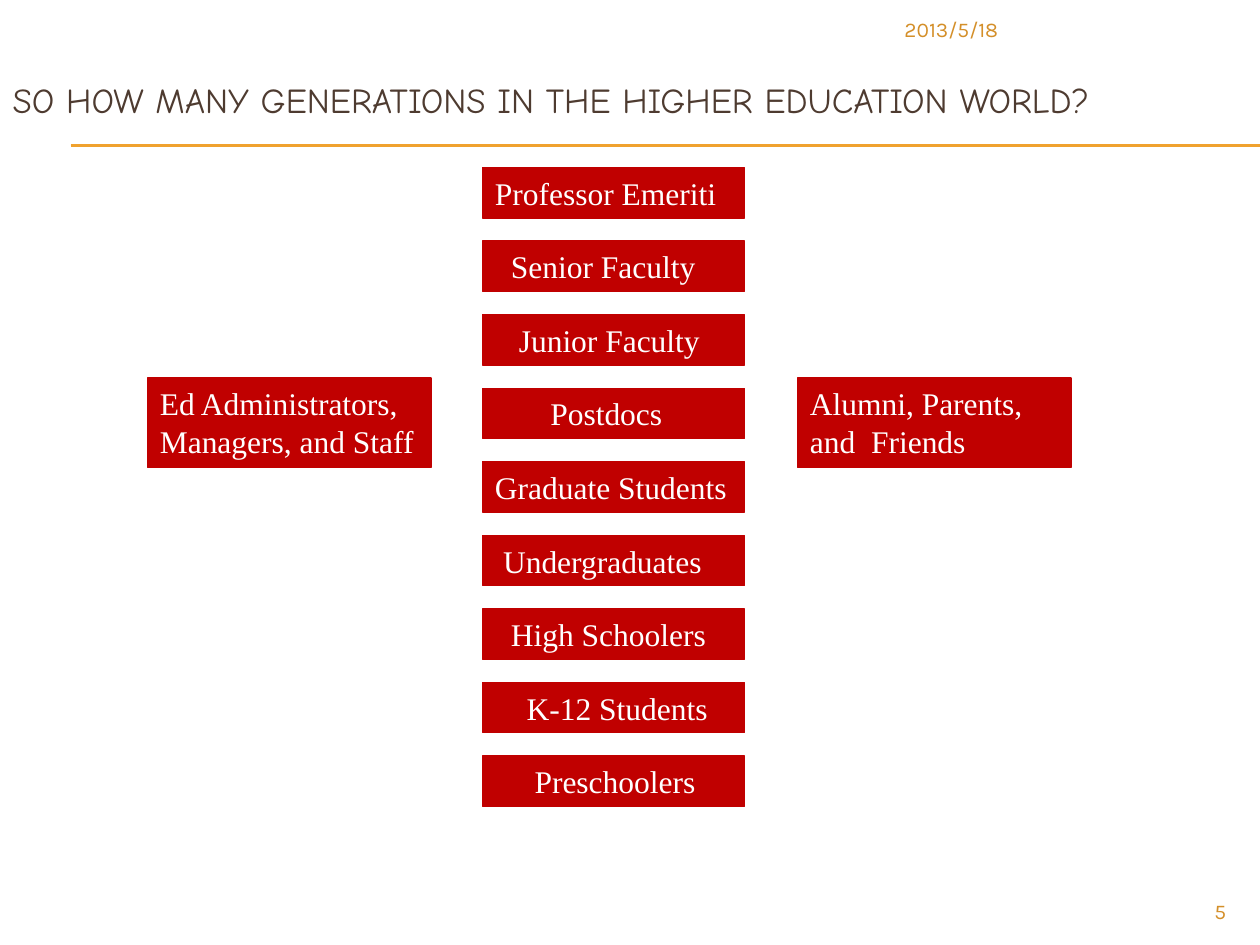
from dataclasses import dataclass

from lxml import etree
from pptx import Presentation
from pptx.dml.color import RGBColor
from pptx.enum import shapes, text
from pptx.oxml import ns
from pptx.util import Inches, Pt


@dataclass(frozen=True)
class Theme:
    box: str = "C00000"
    box_text: str = "FFFFFF"
    title: str = "4E3B30"
    rule: str = "F0A22E"
    footer: str = "D48F29"
    box_font: str = "Times New Roman"
    title_font: str = "Comic Neue"
    footer_font: str = "Karla"
    box_size: float = 18
    title_size: float = 20
    footer_size: float = 12
    line_width: float = 0.75


@dataclass(frozen=True)
class Label:
    words: str
    left: float
    top: float
    width: float
    height: float
    indent: float = 0


THEME = Theme()
COLUMN_TOP, COLUMN_BOTTOM = 1.33, 6
INDENT_STEP = 0.0625

GENERATIONS = [
    ("Professor Emeriti", 0),
    ("Senior Faculty", 2),
    ("Junior Faculty", 3),
    ("Postdocs", 7),
    ("Graduate Students", 0),
    ("Undergraduates", 1),
    ("High Schoolers", 2),
    ("K-12 Students", 4),
    ("Preschoolers", 5),
]
PITCH = (COLUMN_BOTTOM - COLUMN_TOP) / (len(GENERATIONS) - 1)

BOXES = [
    Label(words, 3.83, COLUMN_TOP + row * PITCH, 2.08, 0.4, steps * INDENT_STEP)
    for row, (words, steps) in enumerate(GENERATIONS)
] + [
    Label("Ed Administrators, Managers, and Staff", 1.17, 3, 2.25, 0.71),
    Label("Alumni, Parents, and  Friends", 6.33, 3, 2.17, 0.71),
]


def color(value: str) -> RGBColor:
    return RGBColor.from_string(value)


def write(shape, words: str, font: str, size: float, ink: str,
          align=text.PP_ALIGN.LEFT, anchor=text.MSO_ANCHOR.TOP) -> None:
    frame = shape.text_frame
    frame.text = words
    frame.word_wrap = True
    frame.auto_size = text.MSO_AUTO_SIZE.NONE
    frame.vertical_anchor = anchor
    paragraph = frame.paragraphs[0]
    paragraph.alignment = align
    for run in paragraph.runs:
        run.font.name = font
        run.font.size = Pt(size)
        run.font.color.rgb = color(ink)


def add_title(slide, words: str) -> None:
    title = slide.shapes.title
    title.left, title.top = Inches(0), Inches(0.5)
    title.width, title.height = Inches(10), Inches(0.58)
    write(title, words, THEME.title_font, THEME.title_size, THEME.title,
          anchor=text.MSO_ANCHOR.MIDDLE)


def add_rule(slide, top: float) -> None:
    rule = slide.shapes.add_connector(
        shapes.MSO_CONNECTOR.STRAIGHT,
        Inches(0.56), Inches(top), Inches(10), Inches(top))
    rule.line.color.rgb = color(THEME.rule)
    rule.line.width = Pt(THEME.line_width)
    etree.SubElement(rule._element.spPr, ns.qn("a:effectLst"))


def add_footer(slide, label: Label, align) -> None:
    shape = slide.shapes.add_textbox(
        Inches(label.left), Inches(label.top),
        Inches(label.width), Inches(label.height))
    write(shape, label.words, THEME.footer_font, THEME.footer_size,
          THEME.footer, align)


def add_box(slide, label: Label) -> None:
    shape = slide.shapes.add_shape(
        shapes.MSO_SHAPE.RECTANGLE,
        Inches(label.left), Inches(label.top),
        Inches(label.width), Inches(label.height))
    shape.shadow.inherit = False
    shape.fill.solid()
    shape.fill.fore_color.rgb = color(THEME.box)
    shape.line.color.rgb = color(THEME.box)
    shape.line.width = Pt(THEME.line_width)
    write(shape, label.words, THEME.box_font, THEME.box_size, THEME.box_text)
    shape.text_frame.margin_left = Inches(0.1 + label.indent)


def main() -> None:
    presentation = Presentation()
    presentation.slide_width = Inches(10)
    presentation.slide_height = Inches(7.5)
    slide = presentation.slides.add_slide(presentation.slide_layouts[5])
    for top in (1.15, 1.16):
        add_rule(slide, top)
    add_title(slide, "SO HOW MANY GENERATIONS IN THE HIGHER EDUCATION WORLD?")
    add_footer(slide, Label("2013/5/18", 7.08, 0.08, 2.75, 0.32),
               text.PP_ALIGN.LEFT)
    add_footer(slide, Label("5", 9, 7.08, 0.83, 0.27), text.PP_ALIGN.RIGHT)
    for label in BOXES:
        add_box(slide, label)
    presentation.save("out.pptx")


if __name__ == "__main__":
    main()
